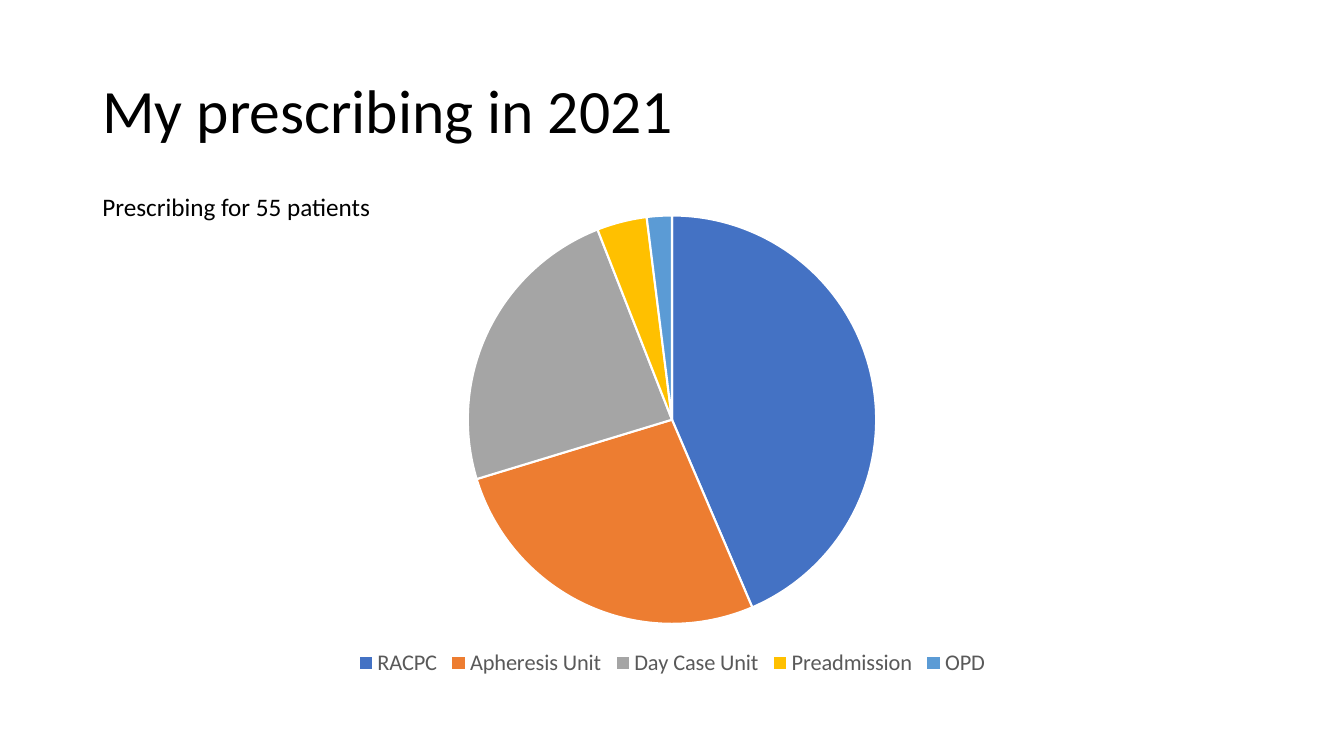
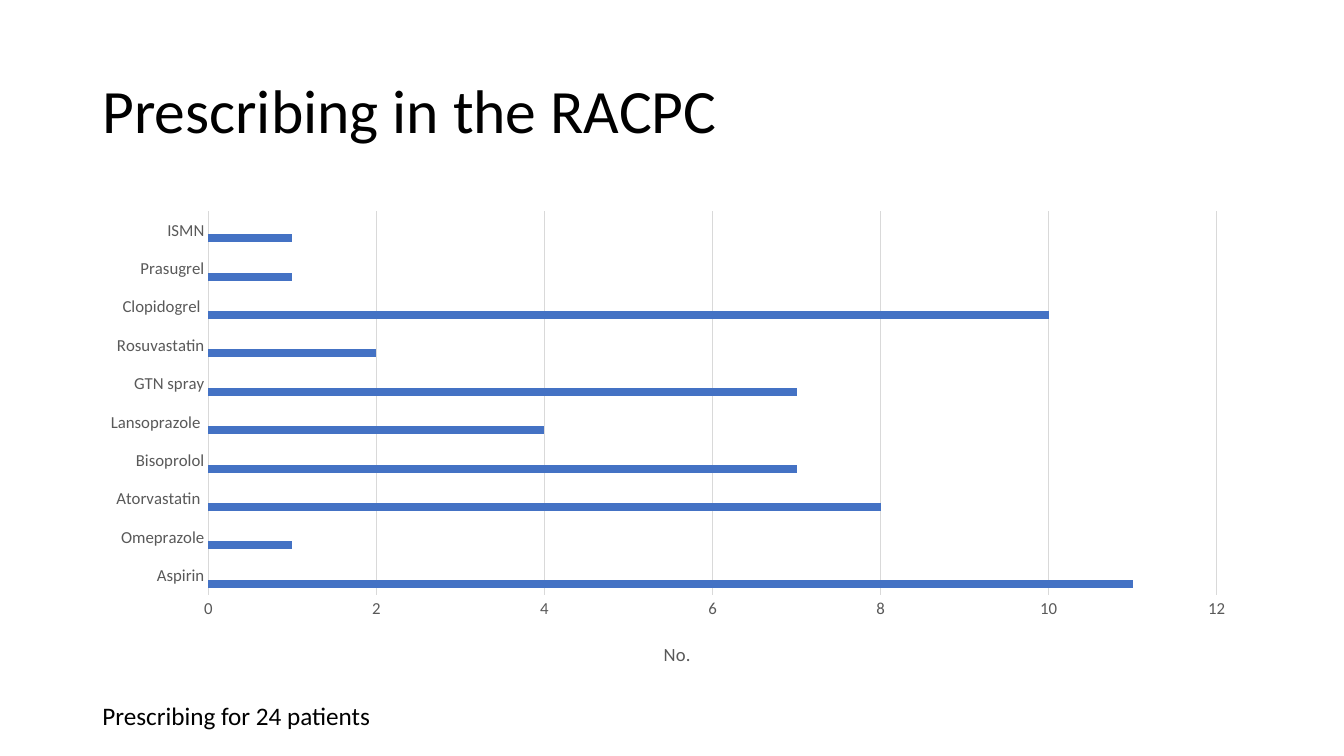
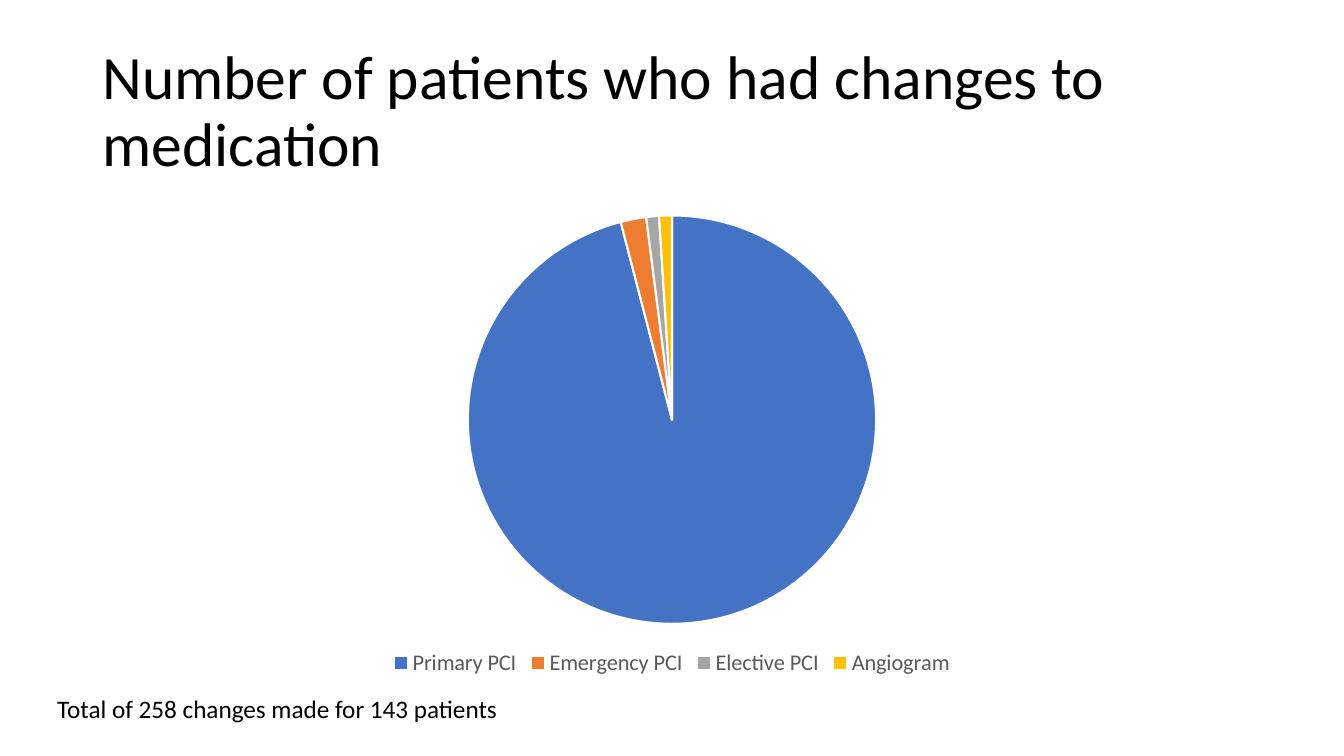
from dataclasses import dataclass

import pptx
import pptx.chart.data
import pptx.dml.color
import pptx.enum.chart
import pptx.enum.text
import pptx.oxml
import pptx.util
from pptx.util import Cm, Pt

RGBColor = pptx.dml.color.RGBColor
XL = pptx.enum.chart

# Shared look
FONT = "Calibri"
BLACK = RGBColor(0x00, 0x00, 0x00)
WHITE = RGBColor(0xFF, 0xFF, 0xFF)
GREY_TEXT = RGBColor(0x59, 0x59, 0x59)
GREY_LINE = RGBColor(0xD9, 0xD9, 0xD9)
BLUE = RGBColor(0x44, 0x72, 0xC4)
ORANGE = RGBColor(0xED, 0x7D, 0x31)
GREY = RGBColor(0xA5, 0xA5, 0xA5)
GOLD = RGBColor(0xFF, 0xC0, 0x00)
SKY = RGBColor(0x5B, 0x9B, 0xD5)
PALETTE = (BLUE, ORANGE, GREY, GOLD, SKY)

LEFT, WIDTH = Cm(2.33), Cm(29.21)
TITLE_TOP, TITLE_HEIGHT = Cm(1.01), Cm(3.68)
CHART_TOP, CHART_HEIGHT = Cm(5.08), Cm(12.09)
NOTE_HEIGHT = Cm(1.03)


@dataclass(frozen=True)
class Note:
    text: str
    left: float
    top: float
    width: float


@dataclass(frozen=True)
class ChartSlide:
    title: str
    kind: XL.XL_CHART_TYPE
    values: dict[str, int]
    note: Note


SLIDES = (
    ChartSlide(
        "My prescribing in 2021",
        XL.XL_CHART_TYPE.PIE,
        {"RACPC": 44, "Apheresis Unit": 27, "Day Case Unit": 24,
         "Preadmission": 4, "OPD": 2},
        Note("Prescribing for 55 patients", 2.33, 4.7, 8.28),
    ),
    ChartSlide(
        "Prescribing in the RACPC",
        XL.XL_CHART_TYPE.BAR_CLUSTERED,
        {"Aspirin": 11, "Omeprazole": 1, "Atorvastatin ": 8, "Bisoprolol": 7,
         "Lansoprazole ": 4, "GTN spray": 7, "Rosuvastatin": 2,
         "Clopidogrel ": 10, "Prasugrel": 1, "ISMN": 1},
        Note("Prescribing for 24 patients", 2.33, 17.53, 8.84),
    ),
    ChartSlide(
        "Number of patients who had changes to medication",
        XL.XL_CHART_TYPE.PIE,
        {"Primary PCI": 95, "Emergency PCI": 2, "Elective PCI": 1,
         "Angiogram": 1},
        Note("Total of 258 changes made for 143 patients", 1.19, 17.35, 11.96),
    ),
)


def set_font(font, size: float, color: RGBColor) -> None:
    font.name, font.size, font.bold = FONT, Pt(size), False
    font.color.rgb = color


def add_text(s, text: str, box: tuple, size: float):
    tf = s.shapes.add_textbox(*box).text_frame
    tf.word_wrap = True
    p = tf.paragraphs[0]
    p.text = text
    set_font(p.font, size, BLACK)
    return tf


def add_title(s, text: str) -> None:
    tf = add_text(s, text, (LEFT, TITLE_TOP, WIDTH, TITLE_HEIGHT), 44)
    tf.vertical_anchor = pptx.enum.text.MSO_ANCHOR.MIDDLE
    tf.paragraphs[0].line_spacing = 0.9


def place(element, inner: bool = False, **fractions: float) -> None:
    """Fix a chart part at fractions of the chart area."""
    ns = "http://schemas.openxmlformats.org/drawingml/2006/chart"
    target = '<c:layoutTarget val="inner"/>' if inner else ""
    modes = "".join(f'<c:{k}Mode val="edge"/>' for k in "xy")
    sizes = "".join(f'<c:{k} val="{v}"/>' for k, v in fractions.items())
    layout = pptx.oxml.parse_xml(
        f'<c:layout xmlns:c="{ns}"><c:manualLayout>{target}{modes}{sizes}'
        "</c:manualLayout></c:layout>")
    old = element.find(f"{{{ns}}}layout")
    if old is None:
        element.insert(0, layout)
    else:
        element.replace(old, layout)


def style_pie(chart) -> None:
    plot = chart.plots[0]
    plot.vary_by_categories = True
    for i, color in enumerate(PALETTE[:len(plot.categories)]):
        fmt = plot.series[0].points[i].format
        fmt.fill.solid()
        fmt.fill.fore_color.rgb = color
        fmt.line.color.rgb = WHITE
        fmt.line.width = Pt(1.5)
    chart.has_legend = True
    chart.legend.position = XL.XL_LEGEND_POSITION.BOTTOM
    chart.legend.include_in_layout = False
    set_font(chart.legend.font, 16, GREY_TEXT)


def style_bars(chart) -> None:
    chart.has_legend = False
    plot = chart.plots[0]
    plot.vary_by_categories = False
    plot.gap_width, plot.overlap = 182, 0
    for series, color in zip(plot.series, PALETTE):
        series.format.fill.solid()
        series.format.fill.fore_color.rgb = color

    # Axes
    cat, val = chart.category_axis, chart.value_axis
    for axis in (cat, val):
        axis.major_tick_mark = axis.minor_tick_mark = XL.XL_TICK_MARK.NONE
        set_font(axis.tick_labels.font, 12, GREY_TEXT)
    val.minimum_scale, val.maximum_scale, val.major_unit = 0, 12, 2
    val.has_major_gridlines = True
    val.format.line.fill.background()
    for line in (cat.format.line, val.major_gridlines.format.line):
        line.color.rgb = GREY_LINE
        line.width = Pt(0.75)

    # Axis title and plot area
    p = val.axis_title.text_frame.paragraphs[0]
    p.text = "No."
    set_font(p.font, 13.3, GREY_TEXT)
    place(val.axis_title._element, x=0.49, y=0.91)
    place(chart._chartSpace.chart.plotArea, inner=True,
          x=0.1, y=0.02, w=0.87, h=0.8)


def add_chart(s, spec_: ChartSlide) -> None:
    is_pie = spec_.kind == XL.XL_CHART_TYPE.PIE
    data = pptx.chart.data.CategoryChartData()
    data.categories = list(spec_.values)
    data.add_series("Series 1", list(spec_.values.values()))
    if not is_pie:
        for n in (2, 3):
            data.add_series(f"Series {n}", [None] * len(spec_.values))
    chart = s.shapes.add_chart(
        spec_.kind, LEFT, CHART_TOP, WIDTH, CHART_HEIGHT, data).chart
    chart.has_title = False
    set_font(chart.font, 10, BLACK)
    if is_pie:
        style_pie(chart)
    else:
        style_bars(chart)


def main() -> None:
    prs = pptx.Presentation()
    prs.slide_width, prs.slide_height = Cm(33.87), Cm(19.05)
    for item in SLIDES:
        s = prs.slides.add_slide(prs.slide_layouts[6])
        add_title(s, item.title)
        add_chart(s, item)
        note = item.note
        add_text(s, note.text, (Cm(note.left), Cm(note.top),
                                Cm(note.width), NOTE_HEIGHT), 18)
    prs.save("out.pptx")


if __name__ == "__main__":
    main()
